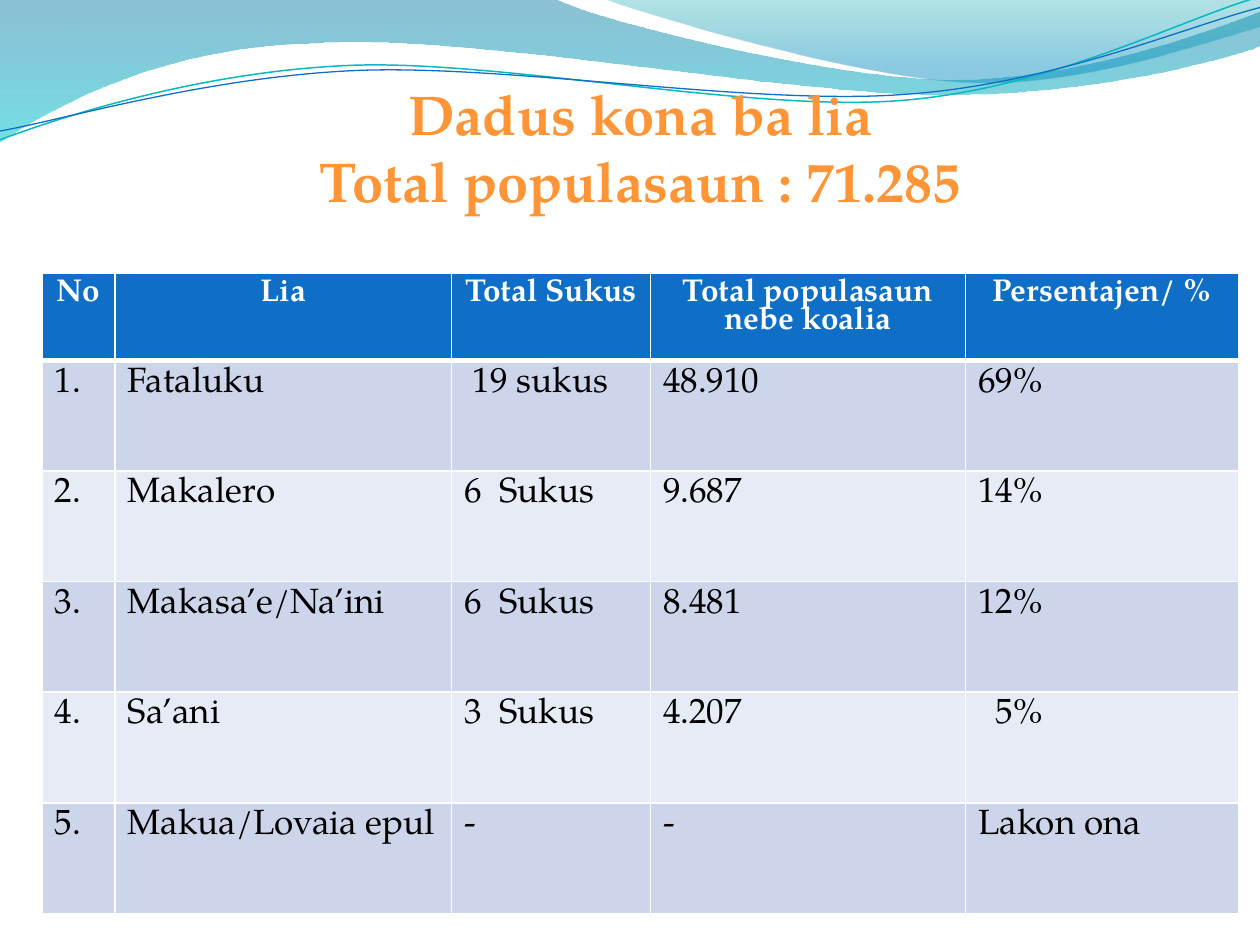
from lxml.etree import SubElement
from pptx import Presentation
from pptx.dml.color import RGBColor
from pptx.enum.text import PP_ALIGN as Align
from pptx.oxml.ns import qn
from pptx.util import Inches, Pt

FONT = "TeX Gyre Pagella"


def color(value):
    return RGBColor.from_string(value)


def write_text(frame, text, size=20, fill="000000", bold=False, align=Align.LEFT, spacing=None):
    frame.word_wrap = True
    for index, line in enumerate(text.split("\n")):
        paragraph = frame.paragraphs[0] if index == 0 else frame.add_paragraph()
        paragraph.alignment = align
        paragraph.line_spacing = spacing
        run = paragraph.add_run()
        run.text = line
        run.font.name = FONT
        run.font.size = Pt(size)
        run.font.bold = bold
        run.font.color.rgb = color(fill)


def set_borders(cell, bottom):
    properties = cell._tc.get_or_add_tcPr()
    widths = (("a:lnL", 1), ("a:lnR", 1), ("a:lnT", 1), ("a:lnB", bottom))
    for index, (tag, width) in enumerate(widths):
        line = SubElement(properties, qn(tag), w=str(Pt(width)))
        SubElement(SubElement(line, qn("a:solidFill")), qn("a:srgbClr"), val="FFFFFF")
        properties.insert(index, line)


class SlideBuilder:
    def __init__(self, slide):
        self.slide = slide
        self.header_fill = "0F6FC6"
        self.band_fills = ("CCD5EA", "E7EBF5")
        self.title_color = "FF9537"

    def outline(self, start, segments, close):
        anchors = [(Inches(segment[-2]), Inches(segment[-1])) for segment in segments]
        builder = self.slide.shapes.build_freeform(Inches(start[0]), Inches(start[1]))
        builder.add_line_segments(anchors, close=close)
        shape = builder.convert_to_shape()
        shape.shadow.inherit = False
        lines = list(shape._element.spPr.iter(qn("a:lnTo")))
        for line, segment in zip(lines, segments):
            if len(segment) == 6:
                bezier = SubElement(line.getparent(), qn("a:cubicBezTo"))
                for x, y in zip(segment[::2], segment[1::2]):
                    SubElement(bezier, qn("a:pt"), x=str(Inches(x) - shape.left),
                               y=str(Inches(y) - shape.top))
                line.getparent().replace(line, bezier)
        return shape

    def wave(self, start, segments, stops):
        shape = self.outline(start, segments, True)
        shape.line.fill.background()
        shape.fill.gradient()
        shape.fill.gradient_angle = 270
        for stop, (position, value, _) in zip(shape.fill.gradient_stops, stops):
            stop.position = position
            stop.color.rgb = color(value)
        colors = shape._element.spPr.iter(qn("a:srgbClr"))
        for element, (_, _, opacity) in zip(colors, stops):
            SubElement(element, qn("a:alpha"), val=str(opacity * 1000))

    def curve(self, start, segments, value, width):
        shape = self.outline(start, segments, False)
        shape.fill.background()
        shape.line.color.rgb = color(value)
        shape.line.width = Pt(width)

    def title(self, text, left, top, width, height):
        box = self.slide.shapes.add_textbox(Inches(left), Inches(top), Inches(width), Inches(height))
        write_text(box.text_frame, text, size=32, fill=self.title_color, bold=True, align=Align.CENTER)

    def table(self, rows, left, top, widths, height, header_height):
        row_height = (height - header_height) / (len(rows) - 1)
        table = self.slide.shapes.add_table(
            len(rows), len(widths), Inches(left), Inches(top),
            Inches(sum(widths)), Inches(height)).table
        for column, width in zip(table.columns, widths):
            column.width = Inches(width)
        for index, (row, texts) in enumerate(zip(table.rows, rows)):
            header = index == 0
            row.height = Inches(header_height if header else row_height)
            for cell, text in zip(row.cells, texts):
                cell.fill.solid()
                cell.fill.fore_color.rgb = color(
                    self.header_fill if header else self.band_fills[(index - 1) % 2])
                set_borders(cell, 3 if header else 1)
                if header:
                    write_text(cell.text_frame, text, size=18, fill="FFFFFF", bold=True,
                               align=Align.CENTER, spacing=0.9)
                else:
                    write_text(cell.text_frame, text, spacing=0.9)
        for cell in table.rows[1].cells:
            cell._tc.tcPr.find(qn("a:lnT")).set("w", str(Pt(3)))


def main():
    presentation = Presentation()
    presentation.slide_width = Inches(10)
    presentation.slide_height = Inches(7.5)
    builder = SlideBuilder(presentation.slides.add_slide(presentation.slide_layouts[6]))

    builder.wave(
        (0, 0),
        [(4.4, -0.01), (4.76, 0.17, 6.64, 0.63, 7.58, 0.63), (8.53, 0.63, 9.58, 0.26, 10, 0.09),
         (10.01, 0.36), (9.83, 0.44, 8.7, 0.76, 7.46, 0.75), (6.22, 0.75, 3.82, 0.28, 2.57, 0.34),
         (1.29, 0.36, 0.46, 0.83, -0.01, 1.13), (0, 0)],
        [(0, "0074A1", 45), (1, "00C6CF", 55)])
    builder.wave(
        (4.79, -0.01),
        [(5.09, 0.11, 6.82, 0.62, 7.69, 0.65), (8.56, 0.69, 9.61, 0.32, 10, 0.21), (10, 0),
         (4.79, -0.01)],
        [(0, "00A1A9", 30), (0.8, "008BBF", 45)])
    builder.curve(
        (0, 1.11),
        [(0.48, 0.93, 1.58, 0.57, 2.77, 0.52), (3.95, 0.47, 5.93, 0.89, 7.13, 0.8),
         (8.33, 0.71, 9.38, 0.15, 9.98, -0.02)],
        "0AB8BF", 0.85)
    builder.curve(
        (0, 1.04),
        [(0.47, 0.96, 1.64, 0.61, 2.83, 0.56), (4.03, 0.51, 5.97, 0.84, 7.17, 0.75),
         (8.36, 0.67, 9.41, 0.21, 10, 0.06)],
        "0F6FC6", 0.75)
    builder.table(
        [("No ", " Lia ", "Total Sukus", "Total populasaun nebe koalia", "Persentajen/ %"),
         ("1.", "Fataluku", " 19 sukus", "48.910", "69%"),
         ("2.", "Makalero", "6  Sukus", "9.687", "14%"),
         ("3.", "Makasa’e/Na’ini", "6  Sukus", "8.481", "12%"),
         ("4.", "Sa’ani", "3  Sukus", "4.207", "  5%"),
         ("5.", "Makua/Lovaia epul", "-", "-", "Lakon ona")],
        left=1 / 3, top=2.17, widths=(0.58, 2.67, 1.58, 2.5, 2.17),
        height=5.08, header_height=0.69)
    builder.title("Dadus kona ba lia\nTotal populasaun : 71.285", 0.67, 0.58, 8.83, 1.18)

    presentation.save("out.pptx")


if __name__ == "__main__":
    main()
